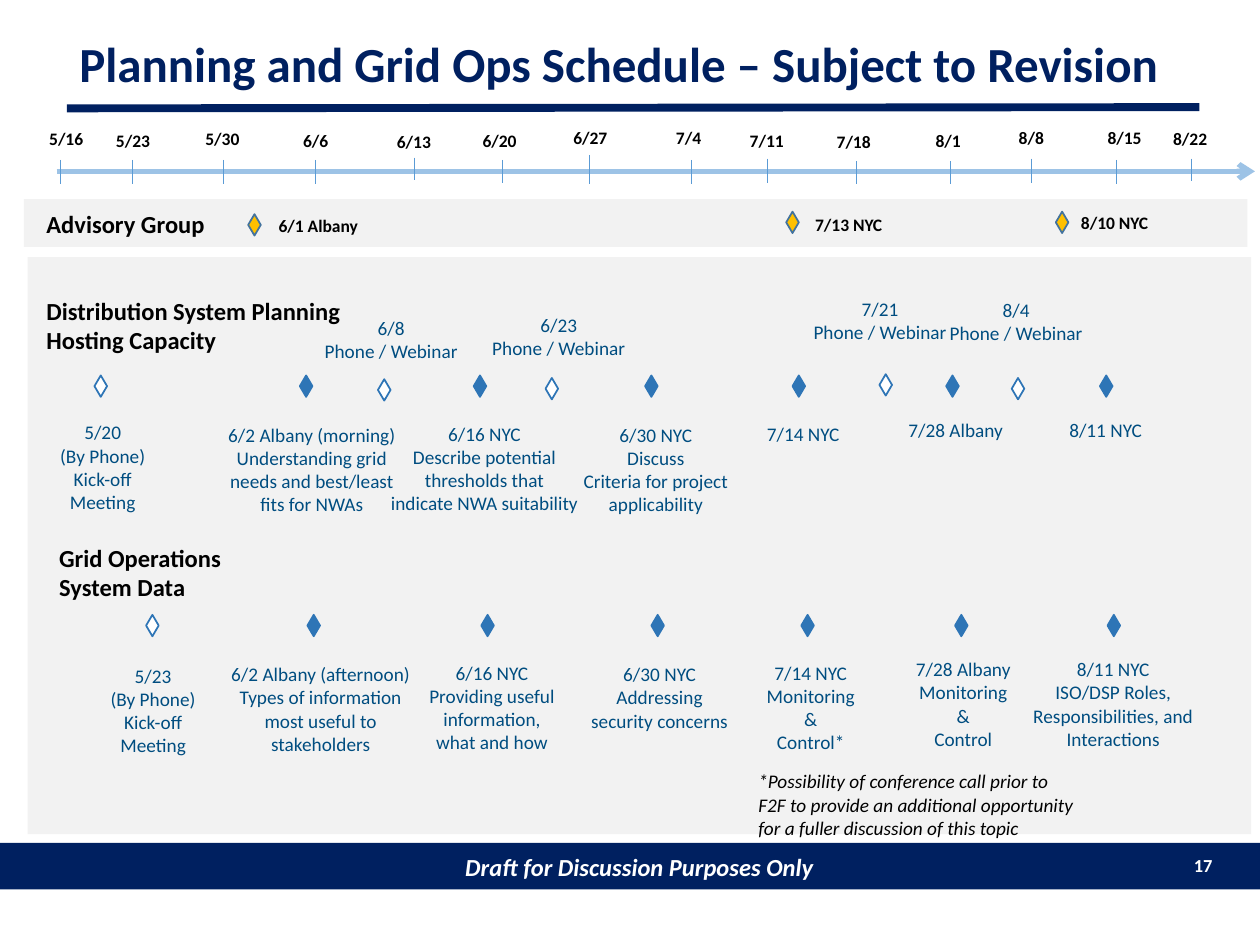
import pptx
import pptx.util
import pptx.dml.color
import pptx.enum.shapes
import pptx.enum.text
import pptx.oxml
import pptx.oxml.ns

Inches = pptx.util.Inches
RGBColor = pptx.dml.color.RGBColor
SHAPE = pptx.enum.shapes.MSO_SHAPE
ALIGN = pptx.enum.text.PP_ALIGN
ANCHOR = pptx.enum.text.MSO_ANCHOR
AUTO = pptx.enum.text.MSO_AUTO_SIZE

NAVY = RGBColor(0x00, 0x20, 0x60)
WHITE = RGBColor(0xFF, 0xFF, 0xFF)
BLACK = RGBColor(0x00, 0x00, 0x00)
GRAY = RGBColor(0xF2, 0xF2, 0xF2)
PALE_BLUE = RGBColor(0x9D, 0xC3, 0xE6)
TICK_BLUE = RGBColor(0x5B, 0x9B, 0xD5)
BLUE = RGBColor(0x2E, 0x75, 0xB6)
EDGE_BLUE = RGBColor(0x43, 0x73, 0x9E)
TEXT_BLUE = RGBColor(0x00, 0x4D, 0x80)
GOLD = RGBColor(0xFF, 0xC0, 0x00)

FOOTER = {"size": 14, "color": WHITE, "bold": True, "italic": True}
NUMBER = {"size": 10.5, "color": WHITE, "bold": True}
TITLE = {"size": 28, "color": NAVY, "bold": True}
HEADING = {"size": 14, "color": BLACK, "bold": True}
DATE = {"size": 10, "color": BLACK, "bold": True}
CAPTION = {"size": 11, "color": TEXT_BLUE}
NOTE = {"size": 11, "color": BLACK, "italic": True}

# date, tick x, tick top, tick bottom, label x, label y (from the timeline box)
DATES = [
    ("5/16", 0.48, 0.31, 0.5, 0.27, 0.01), ("5/23", 1.05, 0.31, 0.5, 0.8, 0.02),
    ("5/30", 1.77, 0.31, 0.5, 1.51, 0.01), ("6/6", 2.5, 0.31, 0.5, 2.25, 0.02),
    ("6/13", 3.29, 0.29, 0.47, 3.03, 0.03), ("6/20", 3.99, 0.31, 0.49, 3.71, 0.02),
    ("6/27", 4.68, 0.27, 0.5, 4.43, 0), ("7/4", 5.49, 0.31, 0.5, 5.21, 0),
    ("7/11", 6.09, 0.3, 0.49, 5.83, 0.02), ("7/18", 6.8, 0.32, 0.5, 6.52, 0.03),
    ("8/1", 7.54, 0.32, 0.5, 7.27, 0.02), ("8/8", 8.19, 0.3, 0.49, 7.93, 0),
    ("8/15", 8.86, 0.31, 0.5, 8.67, 0), ("8/22", 9.46, 0.3, 0.48, 9.19, 0.01),
]

# diamond x, y, caption x, y (from the band)
ADVISORY = [
    ("6/1 Albany", 1.78, 0.12, 1.84, 0.08),
    ("7/13 NYC", 6.05, 0.1, 6.05, 0.07),
    ("8/10 NYC", 8.19, 0.1, 8.16, 0.05),
]

# diamond x, y, fill, caption x, y, width (from the workstream box), caption
CALL = "Phone / Webinar"
KICKOFF = "(By Phone)\nKick-off Meeting"
PLANNING = [
    (0.53, 0.68, WHITE, 0.1, 0.99, 0.99, "5/20\n" + KICKOFF),
    (2.16, 0.68, BLUE, 1.35, 1.01, 1.81,
     "6/2 Albany (morning)\nUnderstanding grid\nneeds and best/least\nfits for NWAs"),
    (2.78, 0.71, WHITE, 2.11, 0.16, 1.55, "6/8\n" + CALL),
    (3.54, 0.68, BLUE, 2.72, 1, 1.81,
     "6/16 NYC\nDescribe potential thresholds that\nindicate NWA suitability"),
    (4.11, 0.7, WHITE, 3.44, 0.14, 1.55, "6/23\n" + CALL),
    (4.9, 0.68, BLUE, 4.08, 1.01, 1.81,
     "6/30 NYC\nDiscuss\nCriteria for project\napplicability"),
    (6.07, 0.68, BLUE, 5.25, 1, 1.81, "7/14 NYC"),
    (6.76, 0.67, WHITE, 5.99, 0.01, 1.55, "7/21\n" + CALL),
    (7.29, 0.68, BLUE, 6.46, 0.97, 1.81, "7/28 Albany"),
    (7.81, 0.7, WHITE, 7.06, 0.02, 1.57, "8/4\n" + CALL),
    (8.51, 0.68, BLUE, 7.65, 0.97, 1.81, "8/11 NYC"),
]
OPERATIONS = [
    (0.94, 0.62, WHITE, 0.5, 0.96, 0.99, "5/23\n" + KICKOFF),
    (2.22, 0.62, BLUE, 1.42, 0.95, 1.81,
     "6/2 Albany (afternoon)\nTypes of information most useful to stakeholders"),
    (3.6, 0.62, BLUE, 2.78, 0.94, 1.81,
     "6/16 NYC\nProviding useful information,\nwhat and how"),
    (4.95, 0.62, BLUE, 4.11, 0.95, 1.81, "6/30 NYC\nAddressing\nsecurity concerns"),
    (6.14, 0.62, BLUE, 5.31, 0.94, 1.81, "7/14 NYC\nMonitoring\n&\nControl*"),
    (7.36, 0.62, BLUE, 6.52, 0.91, 1.81, "7/28 Albany\nMonitoring\n&\nControl"),
    (8.57, 0.62, BLUE, 7.71, 0.91, 1.81,
     "8/11 NYC\nISO/DSP Roles, Responsibilities, and Interactions"),
]


def write(tf, text, style, align):
    tf.word_wrap = True
    for i, line in enumerate(text.split("\n")):
        p = tf.paragraphs[0] if i == 0 else tf.add_paragraph()
        p.alignment = align
        r = p.add_run()
        r.text = line
        r.font.name = "Calibri"
        for name, value in style.items():
            if name == "color":
                r.font.color.rgb = value
            else:
                setattr(r.font, name, pptx.util.Pt(value) if name == "size" else value)


def add_text(s, x, y, w, h, text, style, align=ALIGN.CENTER):
    sp = s.shapes.add_textbox(Inches(x), Inches(y), Inches(w), Inches(h))
    write(sp.text_frame, text, style, align)
    sp.text_frame.auto_size = AUTO.SHAPE_TO_FIT_TEXT


def add_box(s, box, fill, kind=SHAPE.RECTANGLE, line=None):
    sp = s.shapes.add_shape(kind, *[Inches(v) for v in box])
    sp.shadow.inherit = False
    sp.fill.solid()
    sp.fill.fore_color.rgb = fill
    if line is None:
        sp.line.fill.background()
    else:
        sp.line.color.rgb = line
        sp.line.width = pptx.util.Pt(1)
    return sp


def add_diamond(s, x, y, fill, line):
    add_box(s, (x, y, 0.1, 0.17), fill, SHAPE.FLOWCHART_DECISION, line)


def add_line(s, x1, y1, x2, y2, color, width, arrow=False):
    c = s.shapes.add_connector(pptx.enum.shapes.MSO_CONNECTOR.STRAIGHT,
                               Inches(x1), Inches(y1), Inches(x2), Inches(y2))
    c.line.color.rgb = color
    c.line.width = pptx.util.Pt(width)
    qn = pptx.oxml.ns.qn
    if arrow:
        ln = c.line._get_or_add_ln()
        ln.append(ln.makeelement(qn("a:tailEnd"), {"type": "arrow"}))
    props = c._element.spPr
    props.append(props.makeelement(qn("a:effectLst"), {}))


def add_title(s, box):
    x, y, w, h = box
    sp = s.shapes.title
    sp.left, sp.top, sp.width, sp.height = [Inches(v) for v in box]
    tf = sp.text_frame
    write(tf, "Planning and Grid Ops Schedule – Subject to Revision", TITLE, ALIGN.LEFT)
    tf.auto_size = AUTO.NONE
    tf.vertical_anchor = ANCHOR.MIDDLE
    tf.paragraphs[0].line_spacing = 0.9
    add_line(s, x, y + 0.61, x + w, y + 0.6, NAVY, 4.5)


def add_footer(s, box):
    x, y, w, h = box
    tf = add_box(s, box, NAVY).text_frame
    tf.margin_left = Inches(0.25)
    tf.vertical_anchor = ANCHOR.MIDDLE
    write(tf, "Draft for Discussion Purposes Only", FOOTER, ALIGN.CENTER)
    add_text(s, x + w - 0.69, y + 0.04, 0.41, 0.29, "17", NUMBER, ALIGN.RIGHT)


def add_timeline(s, box):
    x, y, w, h = box
    add_line(s, x + 0.45, y + 0.4, x + w, y + 0.4, PALE_BLUE, 3, arrow=True)
    for date, tick, top, bottom, dx, dy in DATES:
        add_line(s, x + tick, y + top, x + tick, y + bottom, TICK_BLUE, 0.5)
        add_text(s, x + dx, y + dy, 0.51, 0.27, date, DATE)


def add_advisory(s, box):
    x, y, w, h = box
    add_box(s, box, GRAY)
    add_text(s, x + 0.08, y + 0.03, 1.5, 0.34, "Advisory Group", HEADING, ALIGN.LEFT)
    for text, mx, my, dx, dy in ADVISORY:
        add_diamond(s, x + mx, y + my, GOLD, EDGE_BLUE)
        add_text(s, x + dx, y + dy, 0.99, 0.27, text, DATE)


def add_workstream(s, box, heading, indent, meetings):
    x, y, w, h = box
    add_text(s, x + indent, y, 2.68, 0.57, heading, HEADING, ALIGN.LEFT)
    for mx, my, fill, dx, dy, width, text in meetings:
        add_diamond(s, x + mx, y + my, fill, BLUE)
        add_text(s, x + dx, y + dy, width, 0.84, text, CAPTION)


def add_panel(s, box):
    x, y, w, h = box
    add_box(s, box, GRAY)
    add_workstream(s, (x, y + 0.26, w, 1.96),
                   "Distribution System Planning\nHosting Capacity", 0.05, PLANNING)
    add_workstream(s, (x, y + 2.22, w, 1.8),
                   "Grid Operations\nSystem Data", 0.15, OPERATIONS)
    add_text(s, x + 5.7, y + 4.02, 2.74, 0.66,
             "*Possibility of conference call prior to F2F to provide an additional "
             "opportunity for a fuller discussion of this topic", NOTE, ALIGN.LEFT)


def main():
    prs = pptx.Presentation()
    prs.slide_width, prs.slide_height = Inches(10), Inches(7.5)
    s = prs.slides.add_slide(prs.slide_layouts[5])
    add_footer(s, (0, 6.69, 10, 0.37))
    add_title(s, (0.53, 0.25, 8.99, 0.55))
    add_panel(s, (0.22, 2.04, 9.71, 4.58))
    add_advisory(s, (0.19, 1.58, 9.71, 0.38))
    add_timeline(s, (0, 0.96, 9.96, 0.5))
    prs.save("out.pptx")


if __name__ == "__main__":
    main()
